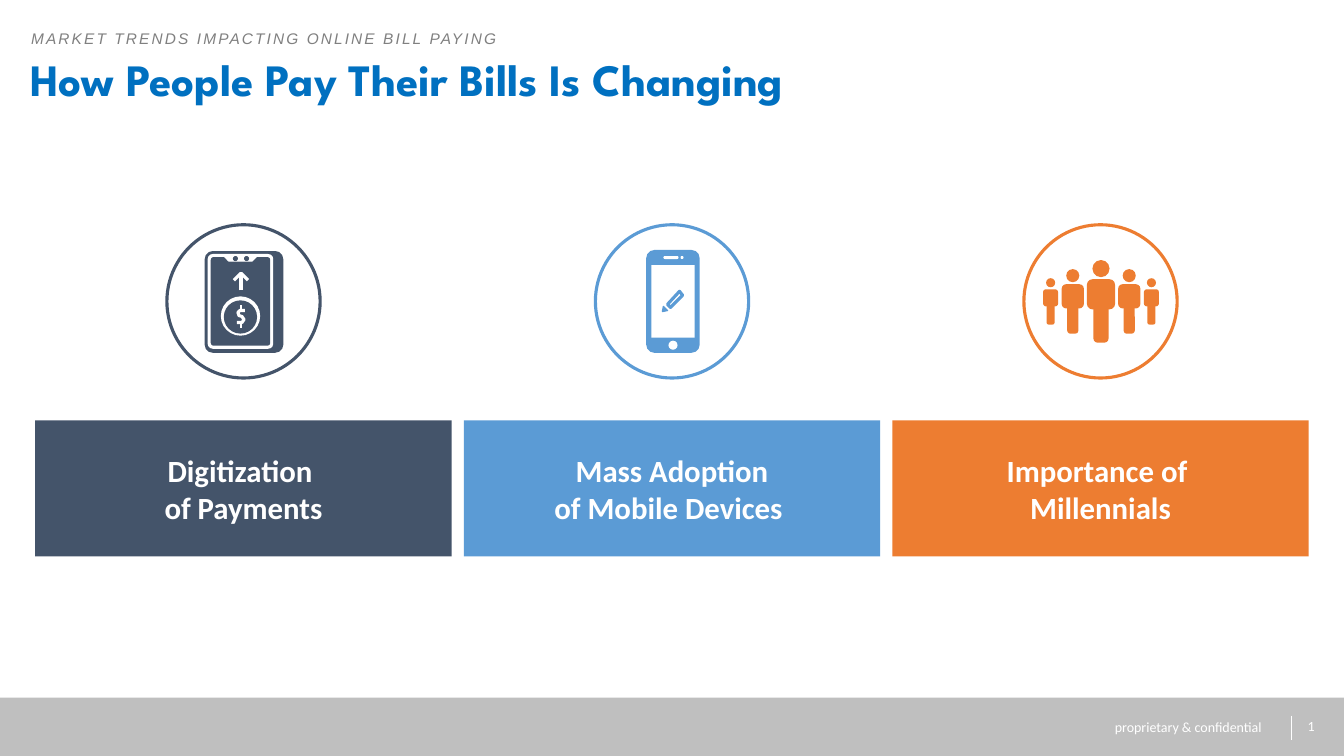
from dataclasses import dataclass
from pptx import Presentation
from pptx.dml.color import RGBColor
from pptx.enum.shapes import MSO_CONNECTOR, MSO_SHAPE
from pptx.enum.text import MSO_ANCHOR, MSO_AUTO_SIZE, PP_ALIGN
from pptx.oxml.ns import qn
from pptx.util import Inches, Pt

RECT, ROUND, OVAL = MSO_SHAPE.RECTANGLE, MSO_SHAPE.ROUNDED_RECTANGLE, MSO_SHAPE.OVAL
STRAIGHT = MSO_CONNECTOR.STRAIGHT
TOP, MIDDLE = MSO_ANCHOR.TOP, MSO_ANCHOR.MIDDLE
LEFT, CENTER = PP_ALIGN.LEFT, PP_ALIGN.CENTER
NO_FIT = MSO_AUTO_SIZE.NONE

WHITE = RGBColor(0xFF, 0xFF, 0xFF)
NAVY = RGBColor(0x44, 0x54, 0x6A)
BLUE = RGBColor(0x5B, 0x9B, 0xD5)
ORANGE = RGBColor(0xED, 0x7D, 0x31)
TITLE_BLUE = RGBColor(0x00, 0x70, 0xC0)
GRAY = RGBColor(0x80, 0x80, 0x80)
FOOTER_GRAY = RGBColor(0xBF, 0xBF, 0xBF)


@dataclass
class Block:
    kind: int
    x: float
    y: float
    w: float
    h: float
    color: RGBColor
    radius: float = 0


@dataclass
class Stroke:
    points: list[tuple[float, float]]
    color: RGBColor
    width: float
    closed: bool = False
    filled: bool = False


@dataclass
class Person:
    offset: float
    head_top: float
    head: float
    torso_top: float
    torso_w: float
    torso_h: float
    leg_w: float
    bottom: float


@dataclass
class Trend:
    paragraphs: list[list[str]]
    color: RGBColor
    icon: list[Block | Stroke]


def add_block(shapes, b: Block):
    sp = shapes.add_shape(b.kind, Inches(b.x), Inches(b.y), Inches(b.w), Inches(b.h))
    sp.shadow.inherit = False
    sp.fill.solid()
    sp.fill.fore_color.rgb = b.color
    sp.line.fill.background()
    if b.radius:
        sp.adjustments[0] = b.radius / min(b.w, b.h)
    return sp


def add_stroke(shapes, k: Stroke) -> None:
    pts = [(Inches(x), Inches(y)) for x, y in k.points]
    builder = shapes.build_freeform(*pts[0])
    builder.add_line_segments(pts[1:], close=k.closed)
    sp = builder.convert_to_shape()
    sp.shadow.inherit = False
    if k.filled:
        sp.fill.solid()
        sp.fill.fore_color.rgb = k.color
    else:
        sp.fill.background()
    sp.line.color.rgb = k.color
    sp.line.width = Pt(k.width)


def add_run(p, text: str, font: str, size: float, color: RGBColor, bold: bool = False):
    r = p.add_run()
    r.text = text
    r.font.name, r.font.size, r.font.bold = font, Pt(size), bold
    r.font.color.rgb = color
    return r


def add_textbox(s, x: float, y: float, w: float, h: float, wrap: bool = True):
    tf = s.shapes.add_textbox(Inches(x), Inches(y), Inches(w), Inches(h)).text_frame
    tf.word_wrap = wrap
    return tf


def person_blocks(person: Person) -> list[Block]:
    mid = 10.92 + person.offset
    parts = [(OVAL, person.head, person.head_top, person.head, 0),
             (ROUND, person.torso_w, person.torso_top, person.torso_h, person.torso_w * 0.2),
             (ROUND, person.leg_w, person.torso_top + 0.1,
              person.bottom - person.torso_top - 0.1, person.leg_w * 0.28)]
    return [Block(kind, mid - w / 2, y, w, h, ORANGE, radius) for kind, w, y, h, radius in parts]


PAYMENT_ICON = [
    Block(ROUND, 2.03, 2.49, 0.78, 1.01, NAVY, 0.08),
    Block(ROUND, 2.06, 2.52, 0.65, 0.94, WHITE, 0.05),
    Block(ROUND, 2.09, 2.55, 0.59, 0.88, NAVY, 0.03),
    Stroke([(2.22, 2.54), (2.27, 2.59), (2.5, 2.59), (2.55, 2.54)], WHITE, 0.75, True, True),
    Block(OVAL, 2.31, 2.54, 0.05, 0.05, NAVY),
    Block(OVAL, 2.42, 2.54, 0.05, 0.05, NAVY),
    Stroke([(2.39, 2.88), (2.39, 2.71)], WHITE, 2.25),
    Stroke([(2.32, 2.78), (2.39, 2.71), (2.46, 2.78)], WHITE, 2.25),
    Block(OVAL, 2.19, 2.94, 0.39, 0.39, WHITE),
    Block(OVAL, 2.22, 2.98, 0.33, 0.33, NAVY),
    Stroke([(2.43, 3.08), (2.38, 3.08), (2.36, 3.1), (2.37, 3.13), (2.4, 3.14),
            (2.42, 3.17), (2.4, 3.2), (2.35, 3.2)], WHITE, 2.25),
    Stroke([(2.39, 3.03), (2.39, 3.08)], WHITE, 2),
    Stroke([(2.39, 3.2), (2.39, 3.25)], WHITE, 2),
]
PHONE_ICON = [
    Block(ROUND, 6.41, 2.48, 0.53, 1.02, BLUE, 0.08),
    Block(RECT, 6.46, 2.63, 0.43, 0.72, WHITE),
    Block(ROUND, 6.58, 2.54, 0.15, 0.03, WHITE, 0.015),
    Block(OVAL, 6.75, 2.54, 0.03, 0.03, WHITE),
    Block(OVAL, 6.63, 3.38, 0.09, 0.09, WHITE),
    Stroke([(6.62, 3.02), (6.74, 2.89), (6.77, 2.93), (6.65, 3.05)], BLUE, 2.25, True),
    Stroke([(6.57, 3.09), (6.58, 3.04), (6.62, 3.08)], BLUE, 1, True, True),
]
CROWD = [
    Person(0, 2.58, 0.17, 2.77, 0.28, 0.3, 0.15, 3.4),
    *[Person(side * 0.28, 2.67, 0.13, 2.82, 0.22, 0.24, 0.11, 3.31) for side in (-1, 1)],
    *[Person(side * 0.5, 2.76, 0.09, 2.87, 0.15, 0.17, 0.08, 3.22) for side in (-1, 1)],
]
PEOPLE_ICON = [block for person in CROWD for block in person_blocks(person)]

TRENDS = [
    Trend([["Digitization "], ["of Payments"]], NAVY, PAYMENT_ICON),
    Trend([["Mass Adoption", "of Mobile Devices "]], BLUE, PHONE_ICON),
    Trend([["Importance of ", "Millennials"]], ORANGE, PEOPLE_ICON),
]
CARD_LEFT, CARD_W, CARD_PITCH, RING = 0.35, 4.13, 4.25, 1.52


def add_trend(s, index: int, trend: Trend) -> None:
    x = CARD_LEFT + index * CARD_PITCH
    tf = add_block(s.shapes, Block(RECT, x, 4.17, CARD_W, 1.35, trend.color)).text_frame
    tf.word_wrap, tf.vertical_anchor = True, MIDDLE
    for i, lines in enumerate(trend.paragraphs):
        p = tf.add_paragraph() if i else tf.paragraphs[0]
        p.alignment = CENTER
        for j, line in enumerate(lines):
            if j:
                p.add_line_break()
            add_run(p, line, "Calibri", 22, WHITE, True)
    ring_x = x + (CARD_W - RING) / 2
    ring = add_block(s.shapes, Block(OVAL, ring_x, 2.23, RING, RING, WHITE))
    ring.fill.background()
    ring.line.color.rgb = trend.color
    ring.line.width = Pt(2.25)
    icon = s.shapes.add_group_shape()
    for part in trend.icon:
        if isinstance(part, Block):
            add_block(icon.shapes, part)
        else:
            add_stroke(icon.shapes, part)


def add_footer(s) -> None:
    add_block(s.shapes, Block(RECT, 0, 6.92, 13.33, 0.58, FOOTER_GRAY))
    line = s.shapes.add_connector(STRAIGHT, Inches(12.81), Inches(7.1), Inches(12.81), Inches(7.34))
    line.line.color.rgb = WHITE
    line.line.width = Pt(1)
    line._element.spPr.add_effectLst() if hasattr(line._element.spPr, "add_effectLst") else \
        line._element.spPr.get_or_add_effectLst()
    tf = add_textbox(s, 10.8, 7.01, 1.97, 0.4)
    tf.vertical_anchor = MIDDLE
    tf.paragraphs[0].alignment = CENTER
    add_run(tf.paragraphs[0], "proprietary & confidential", "Calibri", 10, WHITE)
    tf = add_textbox(s, 12.87, 7.07, 0.37, 0.27, wrap=False)
    field = add_run(tf.paragraphs[0], "2", "Calibri", 10, WHITE)._r
    field.tag = qn("a:fld")
    field.set("id", "{B6F15528-21DE-4FAA-801E-634DDDAF4B2B}")
    field.set("type", "slidenum")


def add_heading(s) -> None:
    title = s.shapes.title
    title.left, title.top, title.width, title.height = map(Inches, (0.2, 0.52, 11.21, 0.78))
    tf = title.text_frame
    tf.auto_size, tf.vertical_anchor, tf.word_wrap = NO_FIT, TOP, True
    p = tf.paragraphs[0]
    p.alignment, p.line_spacing = LEFT, 0.9
    add_run(p, "How People Pay Their Bills Is Changing", "League Spartan", 32, TITLE_BLUE, True)
    tf = add_textbox(s, 0.21, 0.24, 5.39, 0.36)
    r = add_run(tf.paragraphs[0], "MARKET TRENDS IMPACTING ONLINE BILL PAYING", "Arial", 11, GRAY)
    r.font.italic = True
    r._r.get_or_add_rPr().set("spc", "150")


def main() -> None:
    prs = Presentation()
    prs.slide_width, prs.slide_height = Inches(13.33), Inches(7.5)
    s = prs.slides.add_slide(prs.slide_layouts[5])
    add_footer(s)
    add_heading(s)
    for index, trend in enumerate(TRENDS):
        add_trend(s, index, trend)
    prs.save("out.pptx")


if __name__ == "__main__":
    main()
